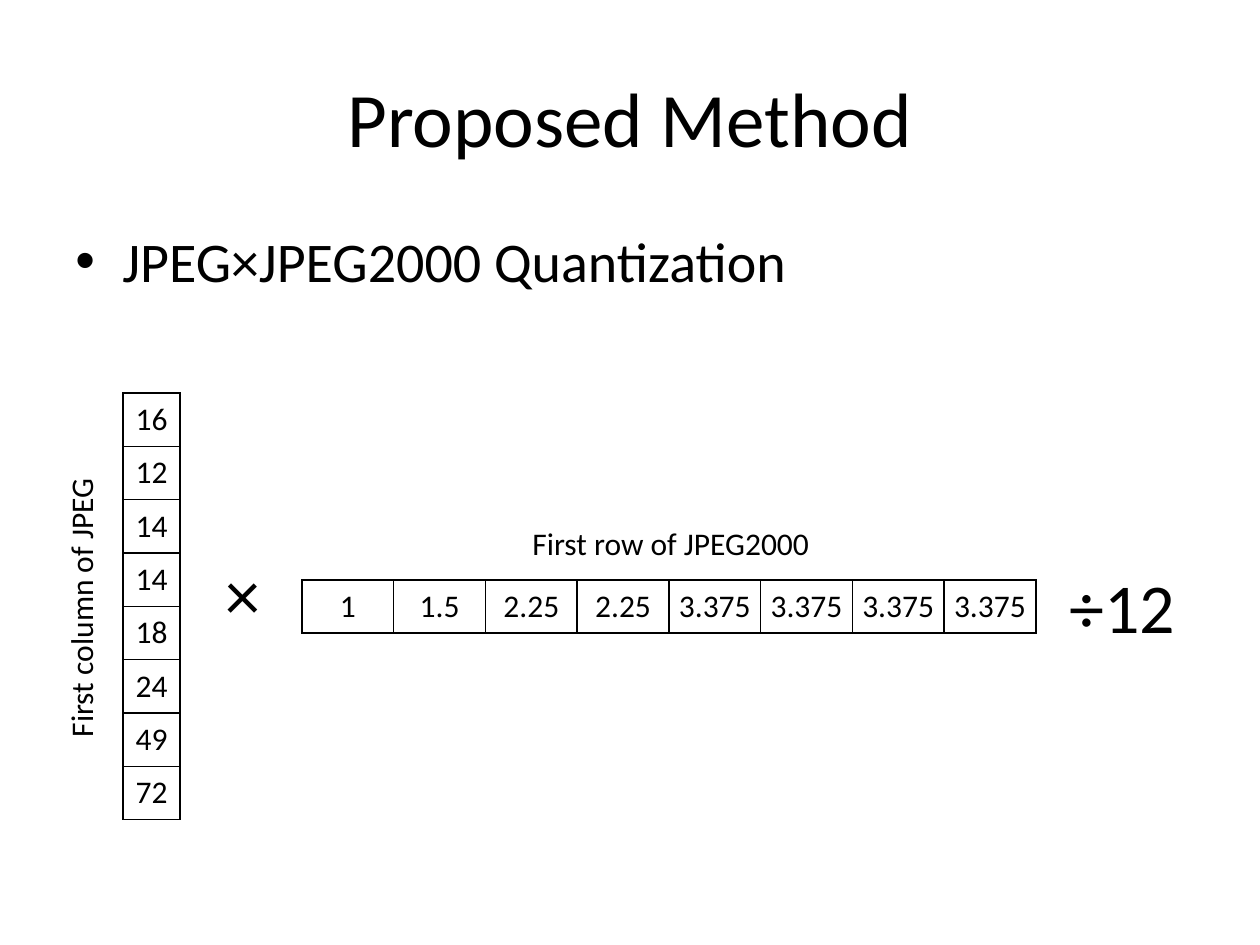
from lxml import etree
from pptx import Presentation
from pptx.dml.color import RGBColor
from pptx.enum.text import MSO_ANCHOR, PP_ALIGN
from pptx.oxml.ns import qn
from pptx.util import Emu, Pt

LEFT, CENTER = PP_ALIGN.LEFT, PP_ALIGN.CENTER
TOP, MIDDLE = MSO_ANCHOR.TOP, MSO_ANCHOR.MIDDLE
EMU_PER_PX = 914400 / 126
BLACK = "000000"


def px(length):
    return Emu(round(length * EMU_PER_PX))


def write(frame, text, size, align=LEFT, anchor=TOP):
    frame.vertical_anchor = anchor
    para = frame.paragraphs[0]
    para.alignment = align
    span = para.add_run()
    span.text = text
    span.font.name = "Calibri"
    span.font.size = Pt(size)
    span.font.color.rgb = RGBColor.from_string(BLACK)
    return para


deck = Presentation()
deck.slide_width, deck.slide_height = px(1260), px(945)
page = deck.slides.add_slide(deck.slide_layouts[6])

# Title
title = page.shapes.add_textbox(px(63), px(38), px(1134), px(158))
title.text_frame.word_wrap = True
write(title.text_frame, "Proposed Method", 44, CENTER, MIDDLE)

# Bullet
body = page.shapes.add_textbox(px(63), px(220), px(1134), px(624))
body.text_frame.word_wrap = True
para = write(body.text_frame, "JPEG×JPEG2000 Quantization", 32)
para.space_before = Pt(6.4)
props = para._p.get_or_add_pPr()
props.set("marL", str(px(47)))
props.set("indent", str(-px(47)))
etree.SubElement(props, qn("a:buFont"), typeface="Arial")
etree.SubElement(props, qn("a:buChar"), char="•")

# Quantization vectors: left, top, width, height, rows of values
jpeg_column = [[value] for value in ("16", "12", "14", "14", "18", "24", "49", "72")]
jpeg2000_row = [["1", "1.5", "2.25", "2.25"] + ["3.375"] * 4]
vectors = [
    (123, 393, 57, 427, jpeg_column),
    (302, 580, 734, 53, jpeg2000_row),
]
for left, top, width, height, rows in vectors:
    table = page.shapes.add_table(
        len(rows), len(rows[0]), px(left), px(top), px(width), px(height)
    ).table
    table.first_row = table.horz_banding = False
    for row, values in enumerate(rows):
        for column, value in enumerate(values):
            cell = table.cell(row, column)
            cell.margin_left = cell.margin_right = px(9)
            cell.margin_top = cell.margin_bottom = 0
            write(cell.text_frame, value, 18, CENTER)
            cell.vertical_anchor = MIDDLE
            cell_props = cell._tc.get_or_add_tcPr()
            for side in ("a:lnL", "a:lnR", "a:lnT", "a:lnB"):
                line = etree.SubElement(cell_props, qn(side), w=str(Pt(1)))
                fill = etree.SubElement(line, qn("a:solidFill"))
                etree.SubElement(fill, qn("a:srgbClr"), val=BLACK)
            cell.fill.background()

# Operators and labels: text, size, left, top, width, height, rotation
labels = [
    ("×", 40, 213, 544, 59, 97, 0),
    ("First column of JPEG", 18, -63, 581, 287, 50, 270),
    ("First row of JPEG2000", 18, 520, 518, 305, 50, 0),
    ("÷12", 40, 1057, 557, 139, 97, 0),
]
for text, size, left, top, width, height, rotation in labels:
    label = page.shapes.add_textbox(px(left), px(top), px(width), px(height))
    label.rotation = rotation
    label.text_frame.word_wrap = False
    write(label.text_frame, text, size)

deck.save("out.pptx")
